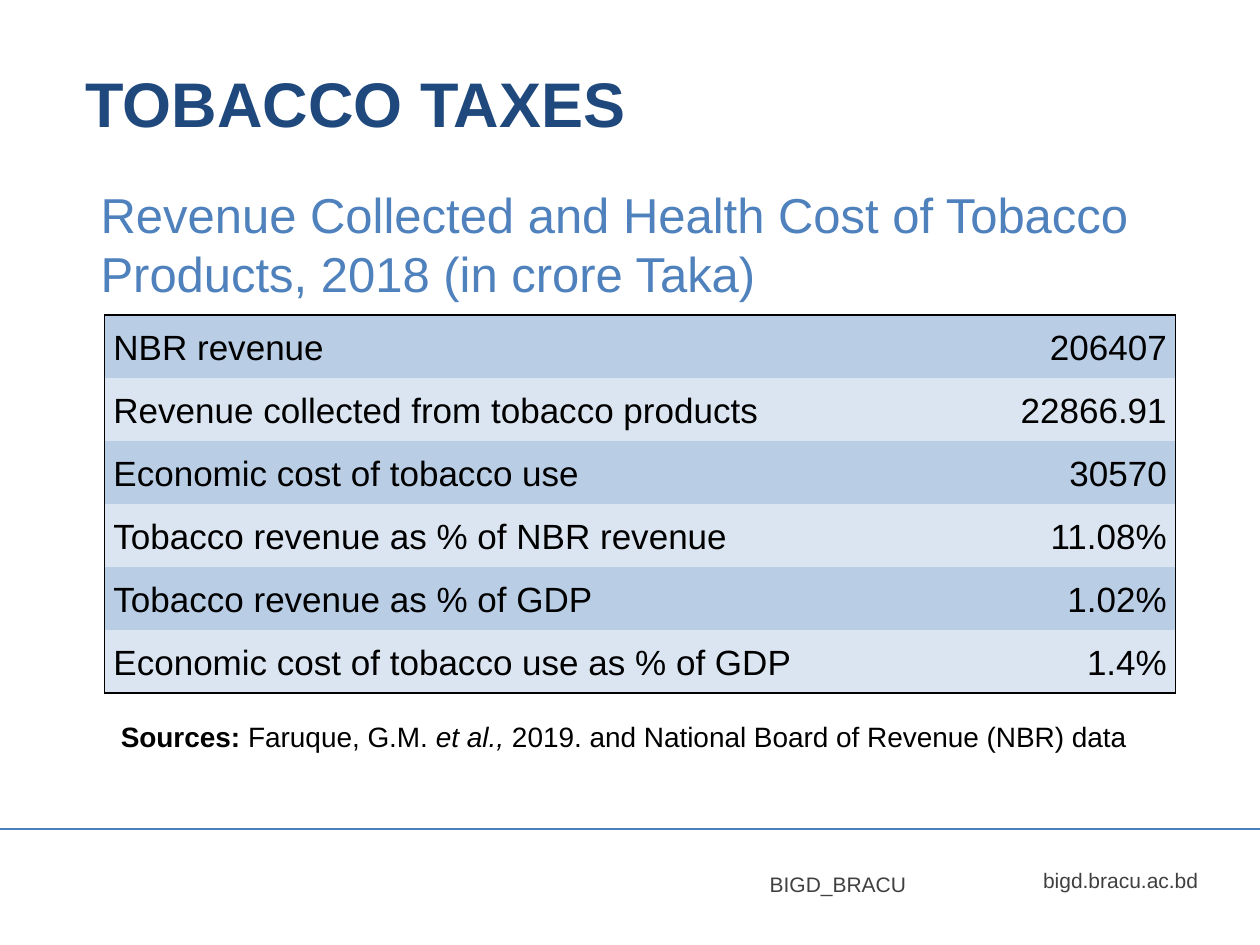
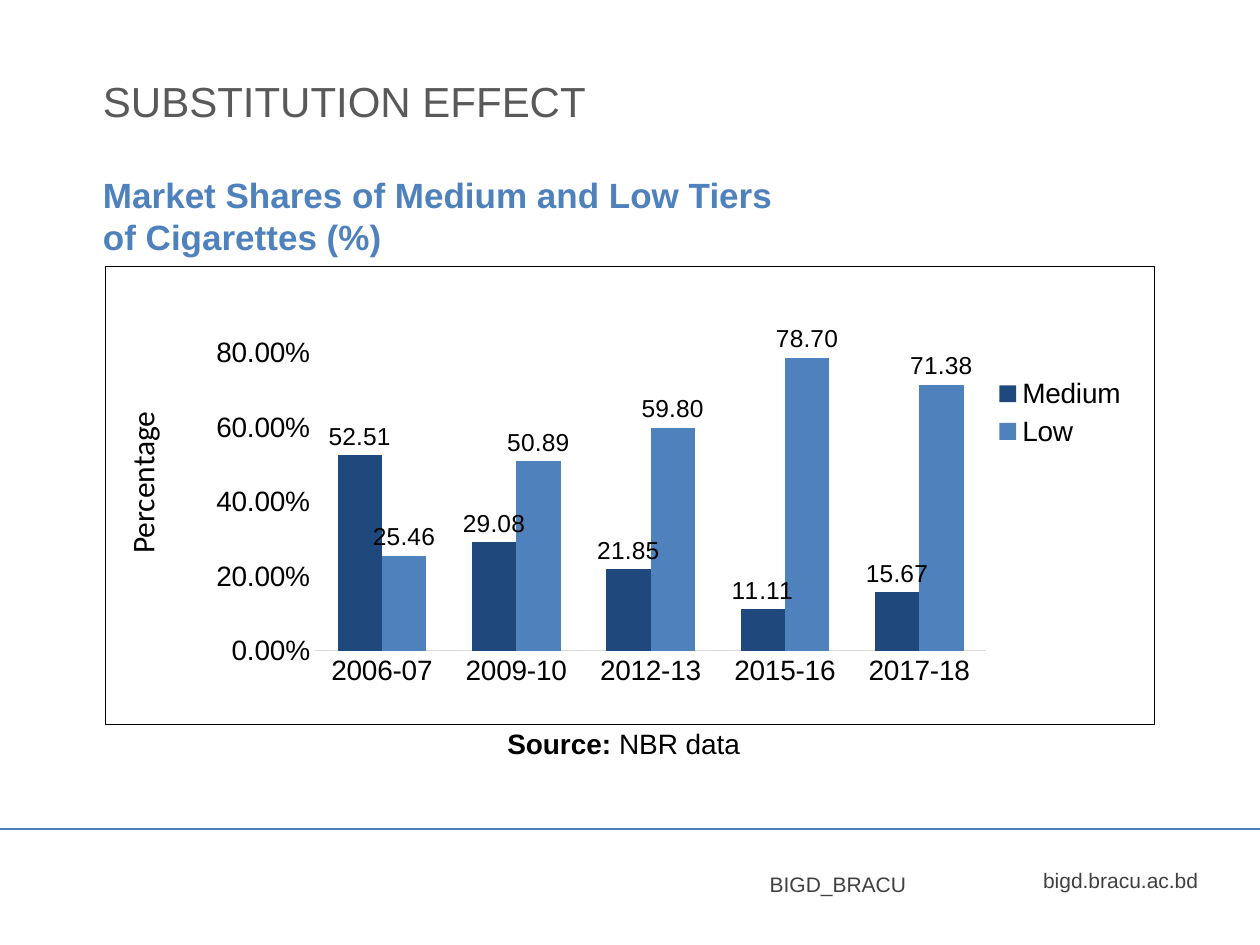
from dataclasses import dataclass
from typing import Any, NamedTuple

from lxml.etree import SubElement
from pptx import Presentation
from pptx.chart.data import CategoryChartData
from pptx.dml.color import RGBColor
from pptx.enum.chart import XL_CHART_TYPE, XL_LABEL_POSITION, XL_LEGEND_POSITION, XL_TICK_MARK
from pptx.enum.shapes import MSO_CONNECTOR
from pptx.enum.text import MSO_ANCHOR, MSO_AUTO_SIZE, PP_ALIGN
from pptx.oxml import parse_xml
from pptx.oxml.ns import nsdecls, qn
from pptx.util import Pt


@dataclass(frozen=True)
class Theme:
    font: str = "Arial"
    axis_font: str = "Calibri"
    black: str = "000000"
    navy: str = "1F497D"
    blue: str = "4F81BD"
    pale: str = "B9CDE5"
    rule: str = "4B7EBC"
    axis: str = "D9D9D9"
    grey: str = "595959"
    footer: str = "404040"
    title: int = 36
    heading: int = 28
    subtitle: int = 24
    table: int = 20
    axis_title: int = 18
    body: int = 16
    data_label: int = 14
    small: int = 12


T = Theme()


class Box(NamedTuple):
    left: float
    top: float
    width: float
    height: float

    def emu(self) -> list[int]:
        return [Pt(v) for v in self]


class Span(NamedTuple):
    text: str
    bold: bool = False
    italic: bool = False


@dataclass(frozen=True)
class Label:
    box: Box
    lines: list[list[Span]]
    size: int
    color: str = T.black
    font: str = T.font
    align: PP_ALIGN = PP_ALIGN.LEFT
    wrap: bool = True
    grow: bool = True
    rotation: int = 0


class Series(NamedTuple):
    name: str
    color: str
    values: list[float]


FOOTER = [
    Label(Box(588.2, 492.5, 103.7, 21.6), [[Span("bigd.bracu.ac.bd")]], T.small, T.footer,
          align=PP_ALIGN.RIGHT, wrap=False),
    Label(Box(432.7, 494.6, 92.9, 21.6), [[Span("BIGD_BRACU")]], T.small, T.footer, wrap=False),
]
REVENUE_LABELS = [
    Label(Box(62, 399.6, 612, 41.8), [[
        Span("Sources: ", bold=True), Span("Faruque, G.M. "), Span("et al., ", italic=True),
        Span("2019. and National Board of Revenue (NBR) data")]], T.body, grow=False),
    Label(Box(41.8, 33.1, 326.2, 51), [[Span("TOBACCO TAXES", bold=True)]], T.title, T.navy,
          wrap=False),
    Label(Box(50.4, 102.2, 622, 75),
          [[Span("Revenue Collected and Health Cost of Tobacco Products, 2018 (in crore Taka)")]],
          T.heading, T.blue),
]
REVENUE_ROWS = [
    ("NBR revenue", "206407"),
    ("Revenue collected from tobacco products", "22866.91"),
    ("Economic cost of tobacco use", "30570"),
    ("Tobacco revenue as % of NBR revenue", "11.08%"),
    ("Tobacco revenue as % of GDP", "1.02%"),
    ("Economic cost of tobacco use as % of GDP", "1.4%"),
]
SHARE_LABELS = [
    Label(Box(164.9, 416.9, 383, 15.8), [[Span("Source: ", bold=True), Span("NBR data")]],
          T.body, align=PP_ALIGN.CENTER, grow=False),
    Label(Box(51.8, 39.6, 293, 36), [[Span("SUBSTITUTION EFFECT")]], T.subtitle, T.grey,
          wrap=False),
    Label(Box(51.8, 95.8, 607.7, 55.4),
          [[Span("Market Shares of Medium and Low Tiers", bold=True)],
           [Span("of Cigarettes (%)", bold=True)]], T.table, T.blue),
    Label(Box(32.4, 260.6, 97.2, 28.8), [[Span("Percentage")]], T.axis_title,
          font=T.axis_font, wrap=False, rotation=270),
]
YEARS = ["2006-07", "2009-10", "2012-13", "2015-16", "2017-18"]
SHARES = [
    Series("Medium", T.navy, [0.5251, 0.2908, 0.2185, 0.1111, 0.1567]),
    Series("Low", T.blue, [0.2546, 0.5089, 0.598, 0.787, 0.7138]),
]


def apply(target: Any, formats: dict[str, Any]) -> None:
    for name, value in formats.items():
        setattr(target, name, value)


def style_font(font: Any, size: int, color: str = T.black, name: str = T.font,
               bold: bool = False, italic: bool = False) -> None:
    apply(font, {"size": Pt(size), "name": name, "bold": bold, "italic": italic})
    font.color.rgb = RGBColor.from_string(color)


def add_label(s: Any, label: Label) -> None:
    sp = s.shapes.add_textbox(*label.box.emu())
    sp.rotation = label.rotation
    tf = sp.text_frame
    apply(tf, {
        "word_wrap": label.wrap,
        "auto_size": MSO_AUTO_SIZE.SHAPE_TO_FIT_TEXT if label.grow else MSO_AUTO_SIZE.NONE,
        "vertical_anchor": MSO_ANCHOR.TOP if label.grow else MSO_ANCHOR.MIDDLE,
    })
    for i, line in enumerate(label.lines):
        p = tf.add_paragraph() if i else tf.paragraphs[0]
        p.alignment = label.align
        for span in line:
            r = p.add_run()
            r.text = span.text
            style_font(r.font, label.size, label.color, label.font, span.bold, span.italic)


def add_slide(prs: Any) -> Any:
    s = prs.slides.add_slide(prs.slide_layouts[6])
    rule = s.shapes.add_connector(MSO_CONNECTOR.STRAIGHT, 0, Pt(473.8), prs.slide_width, Pt(473.8))
    rule.line.color.rgb = RGBColor.from_string(T.rule)
    rule.line.width = Pt(0.75)
    SubElement(rule.element.spPr, qn("a:effectLst"))
    for label in FOOTER:
        add_label(s, label)
    return s


def line_xml(tag: str, width: float) -> Any:
    return parse_xml(f'<{tag} {nsdecls("a")} w="{Pt(width)}"><a:solidFill>'
                     f'<a:srgbClr val="{T.black}"/></a:solidFill></{tag}>')


def add_revenue_table(s: Any) -> None:
    box = Box(59.8, 180, 612, 216)
    last = len(REVENUE_ROWS) - 1
    table = s.shapes.add_table(len(REVENUE_ROWS), 2, *box.emu()).table
    apply(table, {"first_row": False, "horz_banding": False})
    style = table._tbl.tblPr.find(qn("a:tableStyleId"))
    style.text = "{2D5ABB26-0587-4C30-8999-92F81FD0307C}"
    for column, width in zip(table.columns, (491.8, 120.2)):
        column.width = Pt(width)
    for i, row in enumerate(REVENUE_ROWS):
        table.rows[i].height = Pt(box.height / len(REVENUE_ROWS))
        for j, text in enumerate(row):
            cell = table.cell(i, j)
            apply(cell, {"margin_left": Pt(5), "margin_right": Pt(5), "margin_top": 0,
                         "margin_bottom": 0, "vertical_anchor": MSO_ANCHOR.MIDDLE})
            tcPr = cell._tc.get_or_add_tcPr()
            edges = {"a:lnL": j == 0, "a:lnR": j == 1, "a:lnT": i == 0, "a:lnB": i == last}
            for tag, outer in edges.items():
                if outer:
                    tcPr.append(line_xml(tag, 1))
            cell.fill.solid()
            cell.fill.fore_color.rgb = RGBColor.from_string(T.blue if i % 2 else T.pale)
            if i % 2:
                color = tcPr.find(qn("a:solidFill")).find(qn("a:srgbClr"))
                SubElement(color, qn("a:alpha"), val="20000")
            p = cell.text_frame.paragraphs[0]
            apply(p, {"alignment": PP_ALIGN.RIGHT if j else PP_ALIGN.LEFT, "line_spacing": 1.07})
            r = p.add_run()
            r.text = text
            style_font(r.font, T.table)


def set_layout(parent: Any, after: str, box: Box, inner: bool = False) -> None:
    old = parent.find(qn("c:layout"))
    if old is not None:
        parent.remove(old)
    target = '<c:layoutTarget val="inner"/>' if inner else ""
    places = "".join(f'<c:{k} val="{v}"/>' for k, v in zip("xywh", box))
    layout = parse_xml(
        f'<c:layout {nsdecls("c")}><c:manualLayout>{target}<c:xMode val="edge"/>'
        f'<c:yMode val="edge"/>{places}</c:manualLayout></c:layout>')
    if after:
        parent.find(qn(after)).addnext(layout)
    else:
        parent.insert(0, layout)


def add_share_chart(s: Any) -> None:
    data = CategoryChartData(number_format="0.00%")
    data.categories = YEARS
    for series in SHARES:
        data.add_series(series.name, series.values)
    box = Box(59.8, 151.9, 600, 262)
    chart = s.shapes.add_chart(XL_CHART_TYPE.COLUMN_CLUSTERED, *box.emu(), data).chart
    apply(chart, {"has_title": False, "has_legend": True})
    style_font(chart.font, T.body)
    apply(chart.legend, {"position": XL_LEGEND_POSITION.BOTTOM, "include_in_layout": False})
    style_font(chart.legend.font, T.body)

    root = chart.element
    body = root.find(qn("c:chart"))
    set_layout(body.find(qn("c:plotArea")), "", Box(0.2, 0.19, 0.64, 0.65), inner=True)
    set_layout(body.find(qn("c:legend")), "c:legendPos", Box(0.84, 0.23, 0.14, 0.18))
    frame = parse_xml(f'<c:spPr {nsdecls("c", "a")}><a:noFill/></c:spPr>')
    frame.append(line_xml("a:ln", 0.25))
    body.addnext(frame)

    apply(chart.category_axis, {"major_tick_mark": XL_TICK_MARK.NONE})
    axis_line = chart.category_axis.format.line
    axis_line.color.rgb = RGBColor.from_string(T.axis)
    axis_line.width = Pt(0.75)
    apply(chart.value_axis, {"major_tick_mark": XL_TICK_MARK.NONE, "has_major_gridlines": False,
                             "minimum_scale": 0, "maximum_scale": 0.8, "major_unit": 0.2})
    apply(chart.value_axis.tick_labels, {"number_format": "0.00%",
                                         "number_format_is_linked": False})
    chart.value_axis.format.line.fill.background()

    plot = chart.plots[0]
    apply(plot, {"gap_width": 103, "overlap": 0, "vary_by_categories": False})
    for series, share in zip(plot.series, SHARES):
        series.format.fill.solid()
        series.format.fill.fore_color.rgb = RGBColor.from_string(share.color)
        labels = series.data_labels
        apply(labels, {"show_value": True, "number_format": "0.00%",
                       "number_format_is_linked": False,
                       "position": XL_LABEL_POSITION.OUTSIDE_END})
        style_font(labels.font, T.data_label)
        for i, value in enumerate(share.values):
            point_label = series.points[i].data_label
            r = point_label.text_frame.paragraphs[0].add_run()
            r.text = f"{value * 100:.2f}"
            style_font(r.font, T.data_label)
            point_label.position = XL_LABEL_POSITION.OUTSIDE_END


def main() -> None:
    prs = Presentation()
    apply(prs, {"slide_width": Pt(720), "slide_height": Pt(540)})
    for add_content, labels in ((add_revenue_table, REVENUE_LABELS),
                                (add_share_chart, SHARE_LABELS)):
        s = add_slide(prs)
        add_content(s)
        for label in labels:
            add_label(s, label)
    prs.save("out.pptx")


if __name__ == "__main__":
    main()
